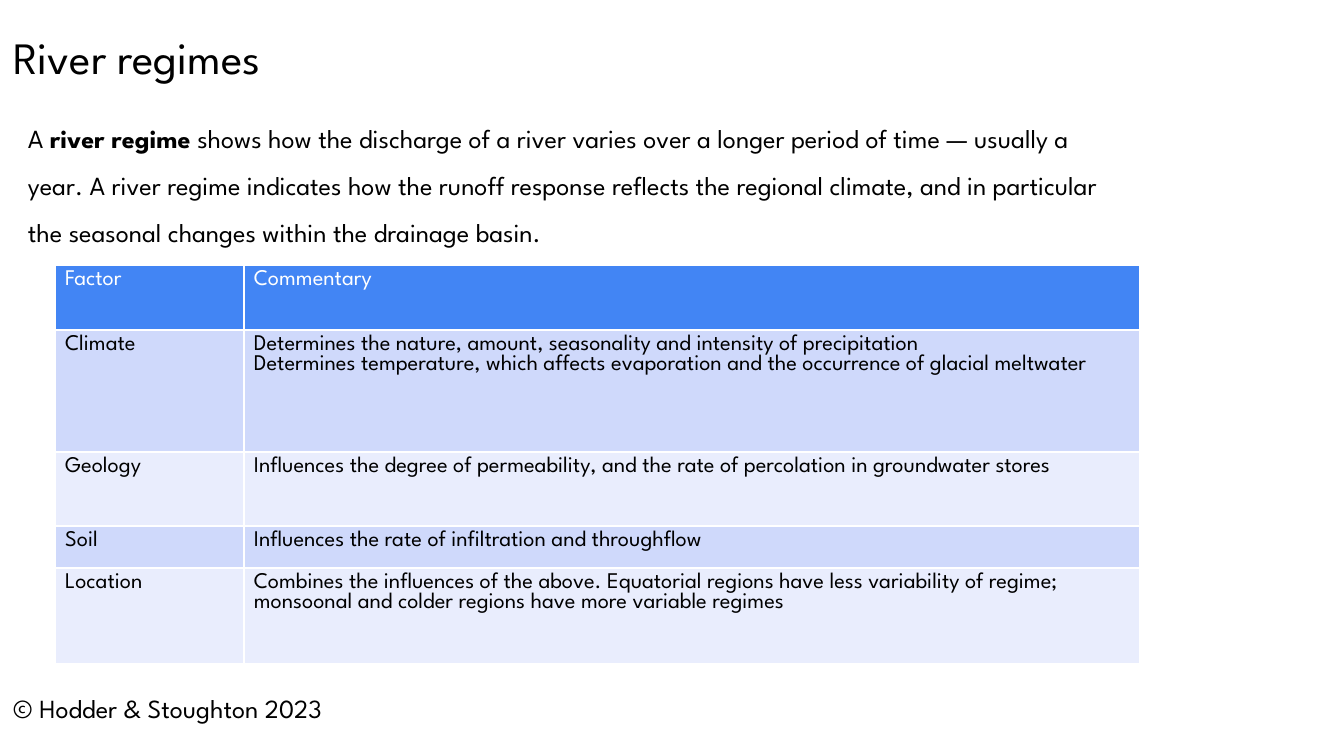
from lxml import etree
from pptx import Presentation, util as u
from pptx.dml.color import RGBColor
from pptx.enum import text
from pptx.oxml.ns import qn

PX = 4572  # 200 px to the inch
FONT = "League Spartan"
COLORS = {"ink": "000000", "white": "FFFFFF", "header": "4285F4",
          "band_dark": "CFD9FB", "band_light": "E9EDFD"}

FACTORS = [
    ("Factor", "Commentary"),
    ("Climate", "Determines the nature, amount, seasonality and intensity of precipitation\n"
                "Determines temperature, which affects evaporation and the occurrence of glacial meltwater"),
    ("Geology", "Influences the degree of permeability, and the rate of percolation in groundwater stores"),
    ("Soil", "Influences the rate of infiltration and throughflow"),
    ("Location", "Combines the influences of the above. Equatorial regions have less variability of regime; "
                 "monsoonal and colder regions have more variable regimes"),
]
COLS = (281, 1334)
ROWS = (97, 182, 110, 62, 143)


def px(*values):
    return [u.Emu(v * PX) for v in values]


def set_attrs(obj, values):
    for name, value in values.items():
        setattr(obj, name, value)


def add_run(p, words, size, color="ink", bold=False):
    r = p.add_run()
    r.text = words
    set_attrs(r.font, {"name": FONT, "size": u.Pt(size), "bold": bold})
    r.font.color.rgb = RGBColor.from_string(COLORS[color])


def text_box(s, box, runs, size, frame=None, para=None):
    """Place one paragraph of (words, bold) runs in the box."""
    tf = s.shapes.add_textbox(*px(*box)).text_frame
    set_attrs(tf, {"word_wrap": True, **(frame or {})})
    p = tf.paragraphs[0]
    set_attrs(p, para or {})
    for words, bold in runs:
        add_run(p, words, size, bold=bold)


def cell_borders(cell, color, width):
    tcPr = cell._tc.get_or_add_tcPr()
    for i, side in enumerate(("lnL", "lnR", "lnT", "lnB")):
        ln = etree.Element(qn(f"a:{side}"), w=str(u.Pt(width)))
        fill = etree.SubElement(ln, qn("a:solidFill"))
        etree.SubElement(fill, qn("a:srgbClr"), val=COLORS[color])
        tcPr.insert(i, ln)


def factor_table(s, left, top):
    size = px(sum(COLS), sum(ROWS))
    table = s.shapes.add_table(len(ROWS), len(COLS), *px(left, top), *size).table
    for col, width in zip(table.columns, px(*COLS)):
        col.width = width
    for row, height in zip(table.rows, px(*ROWS)):
        row.height = height
    side, edge = px(15, 7)
    for i, row in enumerate(FACTORS):
        band = "header" if i == 0 else ("band_light", "band_dark")[i % 2]
        for j, content in enumerate(row):
            cell = table.cell(i, j)
            set_attrs(cell, {"margin_left": side, "margin_right": side,
                             "margin_top": edge, "margin_bottom": edge})
            cell.fill.solid()
            cell.fill.fore_color.rgb = RGBColor.from_string(COLORS[band])
            cell_borders(cell, "white", 1)
            tf = cell.text_frame
            for k, line in enumerate(content.split("\n")):
                p = tf.add_paragraph() if k else tf.paragraphs[0]
                add_run(p, line, 12, "ink" if i else "white")


def regimes_slide(prs):
    s = prs.slides.add_slide(prs.slide_layouts[6])
    middle = {"vertical_anchor": text.MSO_ANCHOR.MIDDLE}
    # Title
    text_box(s, (0, 22, 882, 125), [("River regimes", False)], 24, middle)
    # Definition
    text_box(s, (22, 149, 1674, 224), [
        ("A ", False), ("river regime", True),
        (" shows how the discharge of a river varies over a longer period of time — usually a year. "
         "A river regime indicates how the runoff response reflects the regional climate, "
         "and in particular the seasonal changes within the drainage basin.", False),
    ], 14, {"auto_size": text.MSO_AUTO_SIZE.SHAPE_TO_FIT_TEXT}, {"line_spacing": 1.5})
    # Factors
    factor_table(s, 82, 394)
    # Copyright line
    text_box(s, (0, 1008, 642, 92), [("© Hodder & Stoughton 2023", False)], 14,
             middle, {"space_after": u.Pt(4.5)})


def main():
    prs = Presentation()
    prs.slide_width, prs.slide_height = px(2000, 1125)
    regimes_slide(prs)
    prs.save("out.pptx")


if __name__ == "__main__":
    main()
